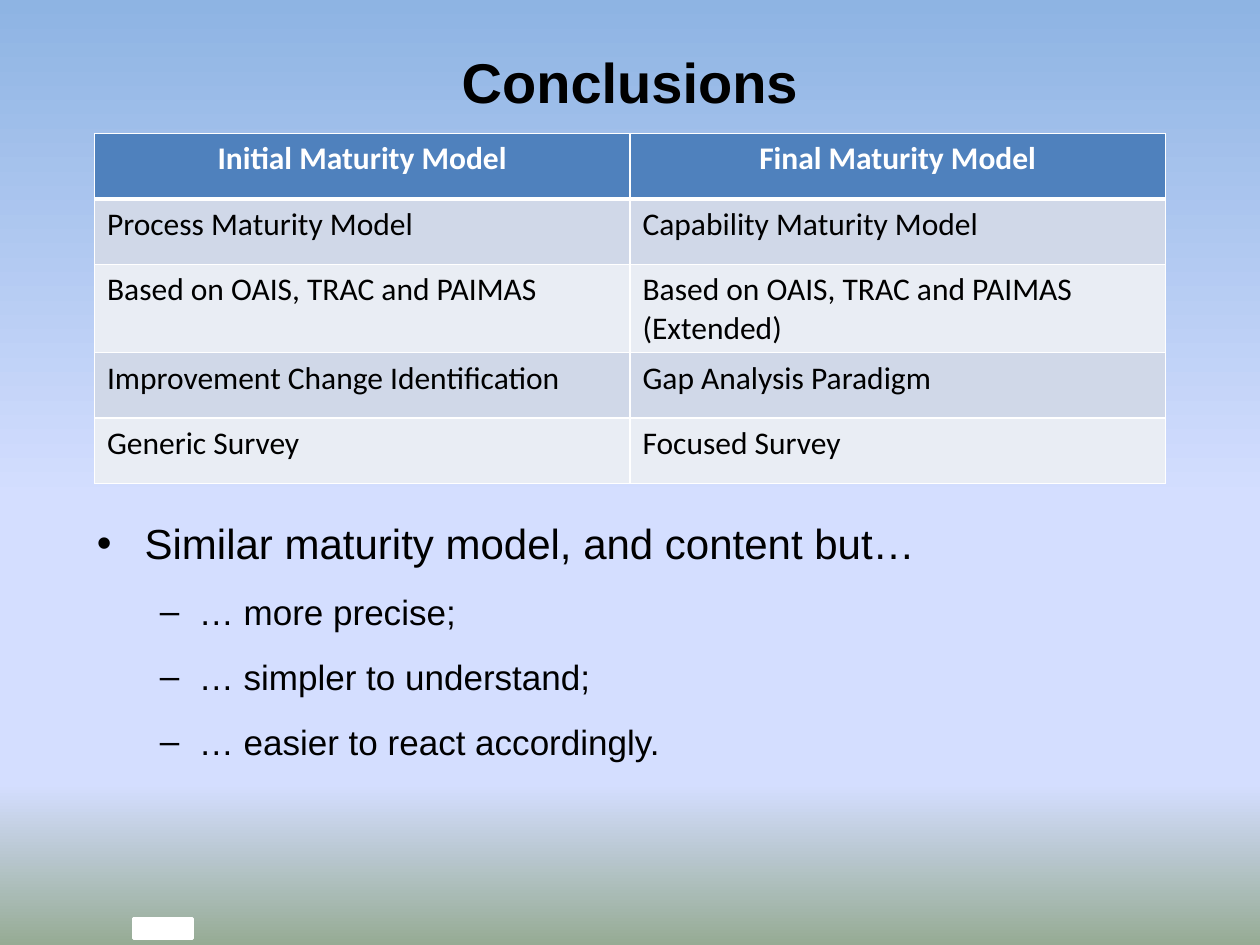
from lxml import etree
from pptx import Presentation
from pptx.dml.color import RGBColor
from pptx.enum.shapes import MSO_SHAPE
from pptx.enum.text import MSO_ANCHOR, PP_ALIGN
from pptx.oxml.ns import qn
from pptx.util import Inches, Pt

CENTER, LEFT, JUSTIFY = PP_ALIGN.CENTER, PP_ALIGN.LEFT, PP_ALIGN.JUSTIFY
MIDDLE = MSO_ANCHOR.MIDDLE
RECTANGLE = MSO_SHAPE.RECTANGLE
color = RGBColor.from_string


def write(paragraph, text, size=18, font="Arial", fill="000000", bold=False,
          align=LEFT, bullet=None, indent=0, hang=0, before=0, after=0):
    if bullet:
        props = paragraph._p.get_or_add_pPr()
        props.set("marL", str(Inches(indent)))
        props.set("indent", str(-Inches(hang)))
        etree.SubElement(props, qn("a:buFont")).set("typeface", "Arial")
        etree.SubElement(props, qn("a:buChar")).set("char", bullet)
    paragraph.text = text
    paragraph.alignment = align
    paragraph.space_before, paragraph.space_after = Pt(before), Pt(after)
    run_font = paragraph.runs[0].font
    run_font.size, run_font.name, run_font.bold = Pt(size), font, bold
    run_font.color.rgb = color(fill)


def set_border(cell, side, width):
    line = etree.SubElement(cell._tc.get_or_add_tcPr(), qn(f"a:ln{side}"), w=str(Pt(width)))
    solid = etree.SubElement(line, qn("a:solidFill"))
    etree.SubElement(solid, qn("a:srgbClr"), val="FFFFFF")


prs = Presentation()
prs.slide_width, prs.slide_height = Inches(10), Inches(7.5)
slide = prs.slides.add_slide(prs.slide_layouts[6])

# Background: sky to grass, top to bottom
sky = slide.background.fill
sky.gradient()
sky.gradient_angle = 270
stops = slide.element.find(".//" + qn("a:gsLst"))
for stop in list(stops):
    stops.remove(stop)
for percent, shade in [(0, "8EB4E3"), (53, "D4DEFF"), (83, "D4DEFF"), (100, "96AB94")]:
    stop = etree.SubElement(stops, qn("a:gs"), pos=str(percent * 1000))
    etree.SubElement(stop, qn("a:srgbClr"), val=shade)

# White footer patch
patch = slide.shapes.add_shape(RECTANGLE, Inches(1.06), Inches(7.29), Inches(0.47), Inches(0.16))
patch.shadow.inherit = False
patch.fill.solid()
patch.fill.fore_color.rgb = color("FFFFFF")
patch.line.color.rgb = color("FFFFFF")
patch.line.width = Pt(2)

# Title
title = slide.shapes.add_textbox(Inches(0.5), Inches(0.3), Inches(9), Inches(0.69)).text_frame
title.word_wrap = True
title.vertical_anchor = MIDDLE
write(title.paragraphs[0], "Conclusions", size=32, bold=True, align=CENTER)

# Comparison of the two models
models = [
    ("Initial Maturity Model", "Final Maturity Model"),
    ("Process Maturity Model", "Capability Maturity Model"),
    ("Based on OAIS, TRAC and PAIMAS", "Based on OAIS, TRAC and PAIMAS\n(Extended)"),
    ("Improvement Change Identification", "Gap Analysis Paradigm"),
    ("Generic Survey", "Focused Survey"),
]
comparison = slide.shapes.add_table(len(models), 2, Inches(0.75), Inches(1.06),
                                    Inches(8.5), Inches(2.6)).table
for column in comparison.columns:
    column.width = Inches(4.25)
for r, entries in enumerate(models):
    comparison.rows[r].height = Inches(0.52)
    header = r == 0
    for c, entry in enumerate(entries):
        cell = comparison.cell(r, c)
        for side in "LRTB":
            header_edge = (header and side == "B") or (r == 1 and side == "T")
            set_border(cell, side, 3 if header_edge else 1)
        cell.fill.solid()
        cell.fill.fore_color.rgb = color("4F81BD" if header else ("E9EDF4", "D0D8E8")[r % 2])
        for i, line in enumerate(entry.split("\n")):
            frame = cell.text_frame
            write(frame.add_paragraph() if i else frame.paragraphs[0], line,
                  font="Calibri", bold=header, fill="FFFFFF" if header else "000000",
                  align=CENTER if header else LEFT)

# Closing points
points = slide.shapes.add_textbox(Inches(0.67), Inches(4.06), Inches(9), Inches(2.8)).text_frame
points.word_wrap = True
write(points.paragraphs[0], "Similar maturity model, and content but…", size=24,
      align=JUSTIFY, bullet="•", indent=0.38, hang=0.38, after=7)
for benefit in ["… more precise;", "… simpler to understand;", "… easier to react accordingly."]:
    point = points.add_paragraph()
    point.level = 1
    write(point, benefit, size=20, align=JUSTIFY, bullet="–",
          indent=0.81, hang=0.31, before=6, after=7)

prs.save("out.pptx")
